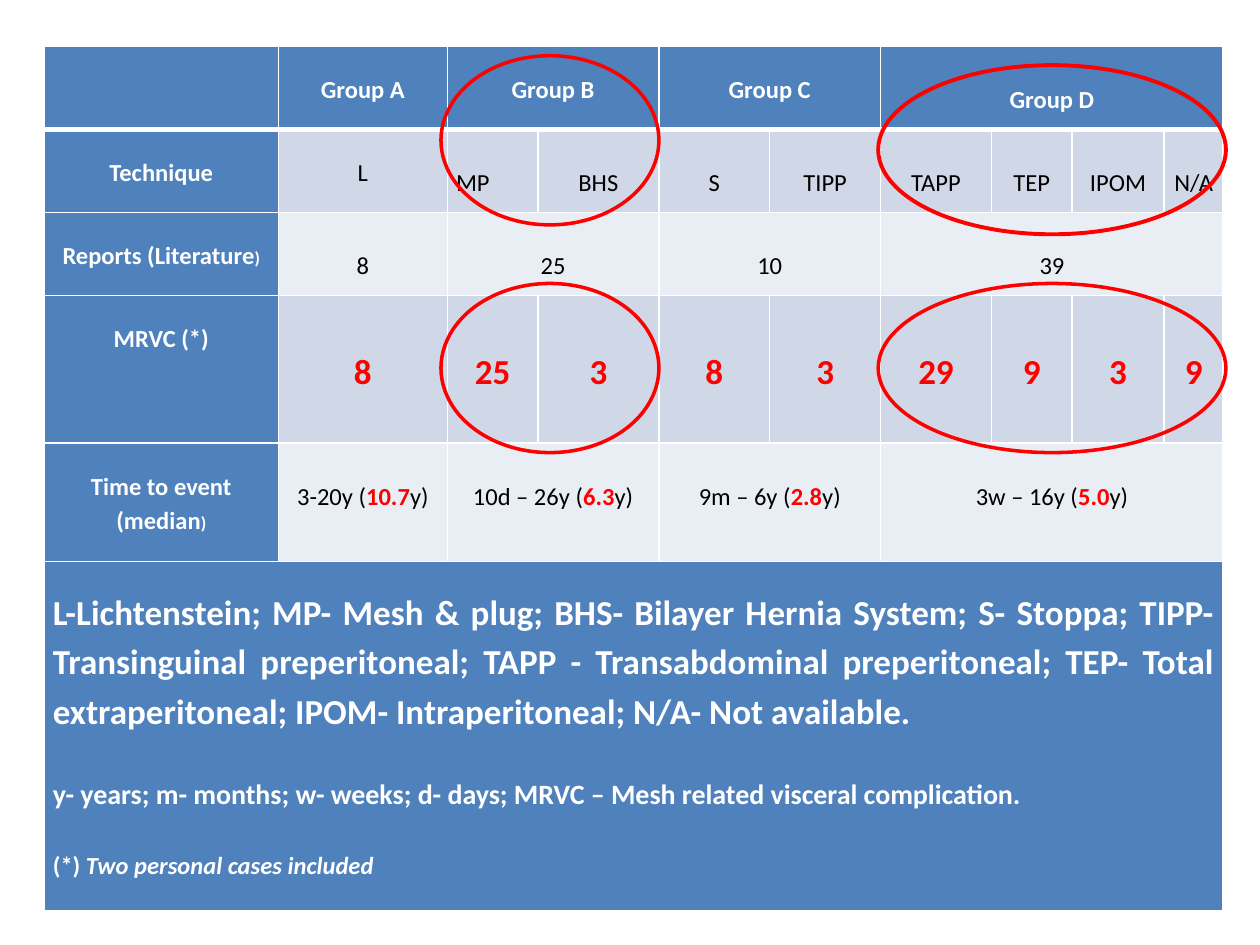
import lxml.etree
import pptx
import pptx.dml.color
import pptx.enum.shapes
import pptx.enum.text
import pptx.oxml.ns
import pptx.util

COLORS = {"blue": "4F81BD", "band": "D0D8E8", "pale": "E9EDF4",
          "white": "FFFFFF", "black": "000000", "red": "FF0000"}
ALIGN = pptx.enum.text.PP_ALIGN
LINE_FACTOR = 1.15
LINE_HEIGHT = 1.4  # points of line per point of type, at that spacing

COLUMNS = [1.86, 1.34, 0.72, 0.96, 0.88, 0.88, 0.88, 0.64, 0.73, 0.47]
ROWS = [0.66, 0.66, 0.66, 1.17, 0.94, 2.77]
GROUPS = [(1, 1), (2, 2), (4, 2), (6, 4)]  # first column, columns covered
SINGLES = [(column, 1) for column in range(1, 10)]

LEGEND = ("L-Lichtenstein; MP- Mesh & plug; BHS- Bilayer Hernia System; "
          "S- Stoppa; TIPP- Transinguinal preperitoneal; "
          "TAPP - Transabdominal preperitoneal; TEP- Total extraperitoneal; "
          "IPOM- Intraperitoneal; N/A- Not available.")
UNITS = ("y- years; m- months; w- weeks; d- days; "
         "MRVC – Mesh related visceral complication.")


def rgb(name):
    return pptx.dml.color.RGBColor.from_string(COLORS[name])


class SlideBuilder:
    """Holds the type style and the current slide."""

    font_name = "Calibri"
    side_inset = pptx.util.Inches(0.07)

    def __init__(self, width, height):
        self.deck = pptx.Presentation()
        self.deck.slide_width = pptx.util.Inches(width)
        self.deck.slide_height = pptx.util.Inches(height)
        self.slide = self.deck.slides.add_slide(self.deck.slide_layouts[6])

    def share(self, x, y):
        return int(x * self.deck.slide_width), int(y * self.deck.slide_height)

    def table(self, x, y, columns, rows):
        size = [pptx.util.Inches(sum(lengths)) for lengths in (columns, rows)]
        frame = self.slide.shapes.add_table(
            len(rows), len(columns), *self.share(x, y), *size)
        self.grid = frame.table
        self.grid.first_row = self.grid.horz_banding = False
        for column, width in zip(self.grid.columns, columns):
            column.width = pptx.util.Inches(width)
        for row, height in zip(self.grid.rows, rows):
            row.height = pptx.util.Inches(height)

    def borders(self, cell, bottom):
        properties = cell._tc.get_or_add_tcPr()
        for index, side in enumerate(("lnL", "lnR", "lnT", "lnB")):
            width = pptx.util.Pt(bottom if side == "lnB" else 1)
            line = lxml.etree.Element(pptx.oxml.ns.qn("a:" + side), w=str(width))
            fill = lxml.etree.SubElement(line, pptx.oxml.ns.qn("a:solidFill"))
            lxml.etree.SubElement(fill, pptx.oxml.ns.qn("a:srgbClr"),
                                  val=COLORS["white"])
            properties.insert(index, line)

    def cell(self, row, column, span, fill, blank_size, bottom=1):
        """Style a cell whose text starts below one line of blank_size type."""
        for covered in range(column, column + span):
            part = self.grid.cell(row, covered)
            part.fill.solid()
            part.fill.fore_color.rgb = rgb(fill)
            self.borders(part, bottom)
        cell = self.grid.cell(row, column)
        if span > 1:
            cell.merge(self.grid.cell(row, column + span - 1))
        cell.margin_left = cell.margin_right = self.side_inset
        cell.margin_top = pptx.util.Pt(LINE_HEIGHT * blank_size)
        cell.margin_bottom = 0
        return cell

    def text(self, paragraph, runs, size=14, color="black", bold=False,
             align=ALIGN.CENTER, blank_size=0):
        """Write runs of (text, changed font properties)."""
        paragraph.alignment = align
        paragraph.line_spacing = LINE_FACTOR
        if blank_size:
            paragraph.space_before = pptx.util.Pt(LINE_HEIGHT * blank_size)
        font = paragraph.font
        font.name, font.size, font.bold = self.font_name, pptx.util.Pt(size), bold
        font.color.rgb = rgb(color)
        for words, changes in runs:
            run = paragraph.add_run()
            run.text = words
            if "size" in changes:
                run.font.size = pptx.util.Pt(changes["size"])
            if "color" in changes:
                run.font.color.rgb = rgb(changes["color"])
            if "bold" in changes:
                run.font.bold = changes["bold"]
            if "italic" in changes:
                run.font.italic = changes["italic"]

    def label(self, row, *runs):
        cell = self.cell(row, 0, 1, "blue", 10)
        self.text(cell.text_frame.paragraphs[0], runs, color="white", bold=True)

    def values(self, row, places, entries, fill, blank_size=14, **style):
        for (column, span), runs in zip(places, entries):
            cell = self.cell(row, column, span, fill, blank_size)
            self.text(cell.text_frame.paragraphs[0], runs, **style)

    def ring(self, x, y, width, height, weight):
        ellipse = self.slide.shapes.add_shape(
            pptx.enum.shapes.MSO_SHAPE.OVAL,
            *self.share(x, y), *self.share(width, height))
        ellipse.shadow.inherit = False
        ellipse.fill.background()
        ellipse.line.color.rgb = rgb("red")
        ellipse.line.width = pptx.util.Pt(weight)


def plain(*entries):
    return [[(entry, {})] for entry in entries]


def span_of_time(extent, median):
    return [(extent + " (", {}), (median, {"color": "red", "bold": True}),
            ("y)", {})]


def main():
    page = SlideBuilder(10, 7.5)
    page.table(0.035, 0.049, COLUMNS, ROWS)

    page.cell(0, 0, 1, "blue", 10, bottom=3)
    for (column, span), letter in zip(GROUPS, "ABCD"):
        header = page.cell(0, column, span, "blue",
                           14 if letter == "D" else 10, bottom=3)
        page.text(header.text_frame.paragraphs[0], [("Group " + letter, {})],
                  color="white", bold=True)

    small = {"size": 10}
    page.label(1, ("Technique", {}))
    page.values(1, SINGLES[:1], plain("L"), "band", blank_size=10)
    page.values(1, SINGLES[1:2], plain("MP"), "band", align=ALIGN.LEFT)
    page.values(1, SINGLES[2:],
                plain("BHS", "S", "TIPP", "TAPP", "TEP", "IPOM", "N/A"), "band")

    page.label(2, ("Reports (Literature", {}), (")", small))
    page.values(2, GROUPS, plain("8", "25", "10", "39"), "pale")

    page.label(3, ("MRVC (*)", {}))
    page.values(3, SINGLES,
                plain("8", "25", "3", "8", "3", "29", "9", "3", "9"),
                "band", blank_size=20, size=20, color="red", bold=True)

    page.label(4, ("Time to event (median", {}), (")", small))
    page.values(4, GROUPS,
                [span_of_time("3-20y", "10.7"), span_of_time("10d – 26y", "6.3"),
                 span_of_time("9m – 6y", "2.8"), span_of_time("3w – 16y", "5.0")],
                "pale")

    notes = page.cell(5, 0, len(COLUMNS), "blue", 10).text_frame
    note_style = {"color": "white", "bold": True}
    page.text(notes.paragraphs[0], [(LEGEND, {})], size=20,
              align=ALIGN.JUSTIFY, **note_style)
    page.text(notes.add_paragraph(), [(UNITS, {})], size=16,
              align=ALIGN.LEFT, blank_size=16, **note_style)
    page.text(notes.add_paragraph(),
              [("(*) ", {}), ("Two personal cases included", {"italic": True})],
              align=ALIGN.LEFT, blank_size=14, **note_style)

    group_b, group_d = (0.35, 0.173), (0.697, 0.276)
    for (x, width), y, weight in ((group_d, 0.3, 2), (group_b, 0.3, 2),
                                  (group_b, 0.059, 2), (group_d, 0.069, 2.25)):
        page.ring(x, y, width, 0.179, weight)

    page.deck.save("out.pptx")


if __name__ == "__main__":
    main()
